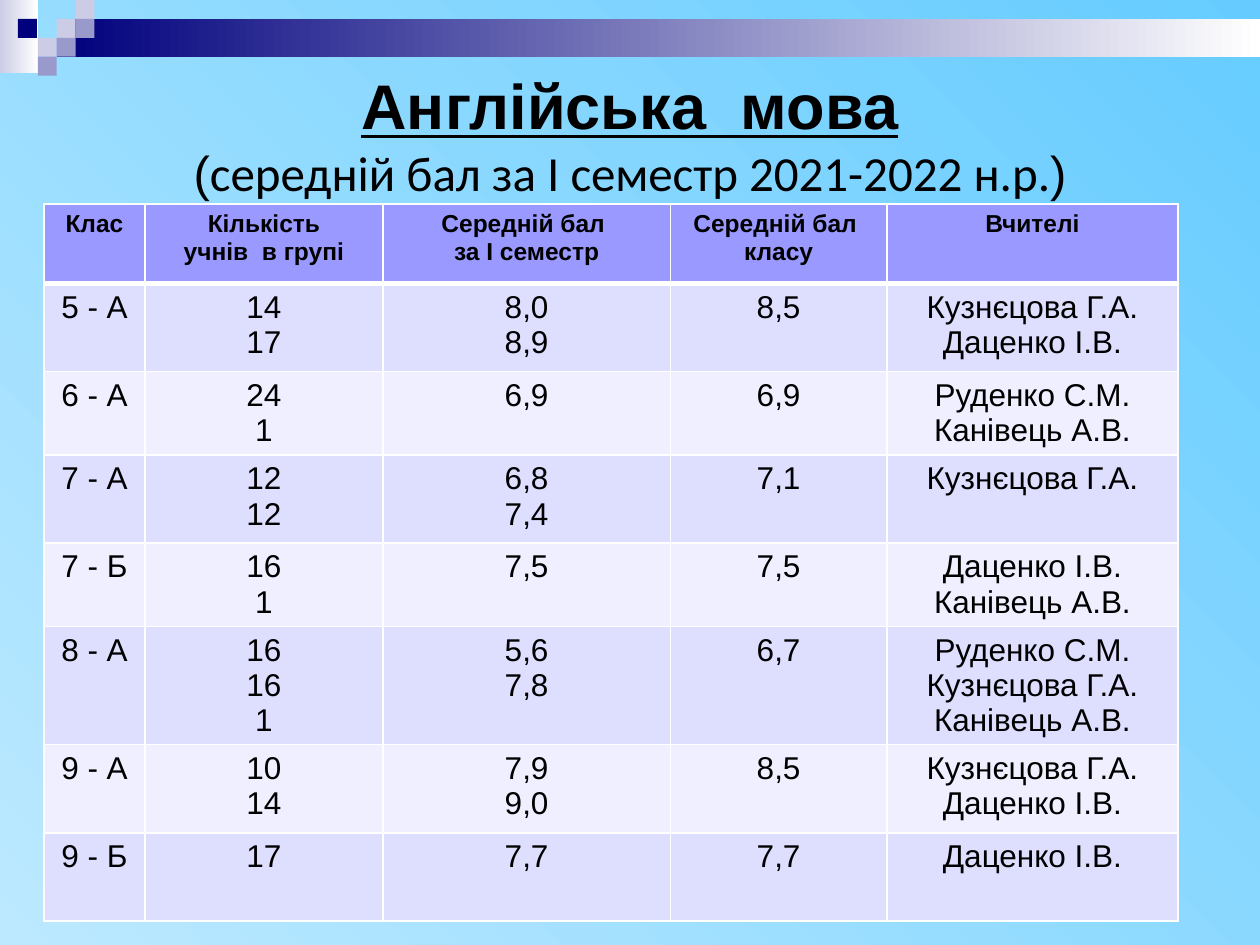
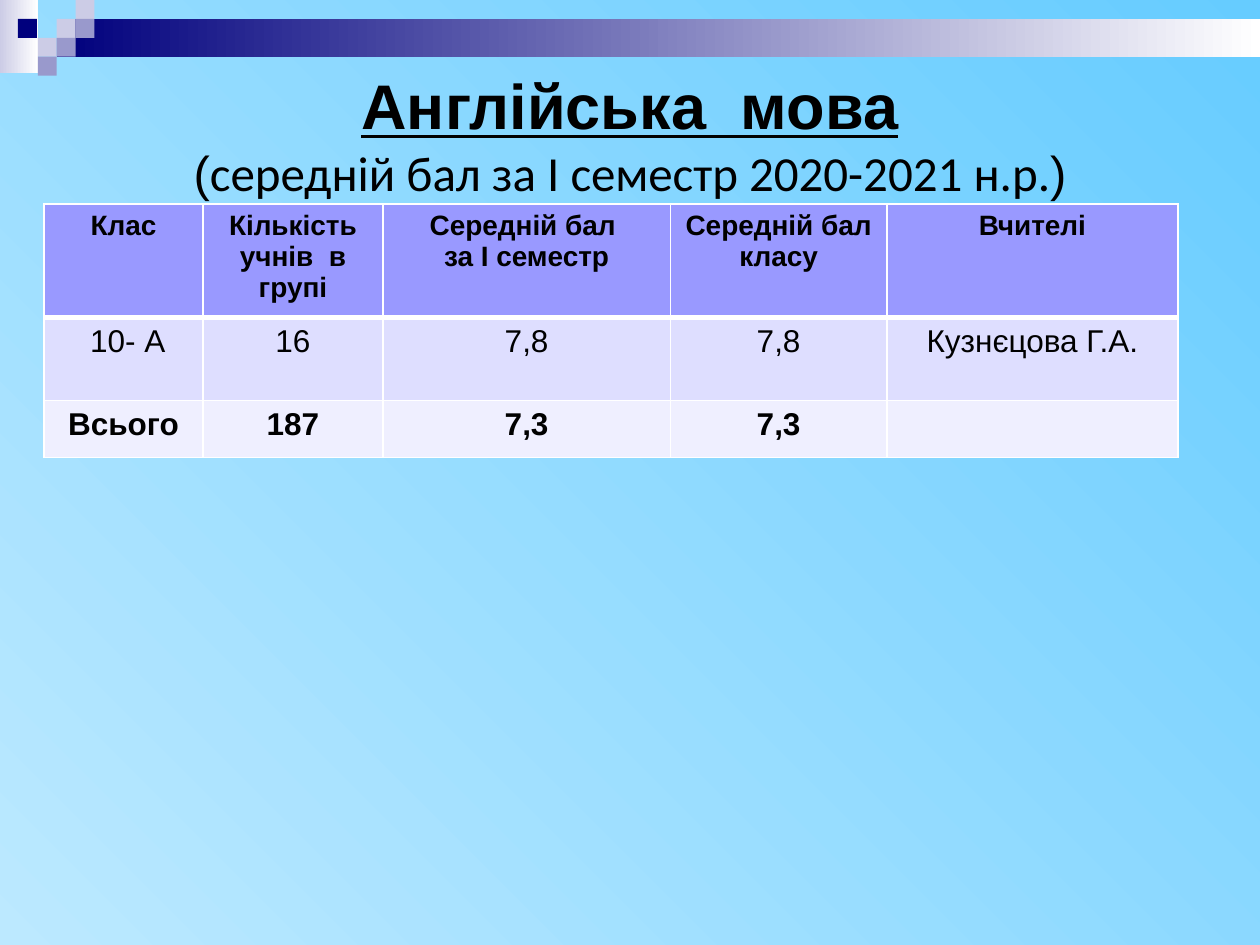
import dataclasses

import lxml.etree
import pptx
import pptx.dml.color
import pptx.enum.shapes
import pptx.enum.text
import pptx.oxml.ns
import pptx.util


@dataclasses.dataclass(frozen=True)
class Theme:
    sky: tuple = ("BCE9FF", "66CCFF")
    corner: tuple = ("CCCCE6", "FFFFFF")
    band: tuple = ("00007D", "FFFFFF")
    navy: str = "00007D"
    pale: str = "CCCCE6"
    violet: str = "9999CC"
    header: str = "9999FF"
    rows: tuple = ("DEDEFF", "EFEFFF")
    border: str = "FFFFFF"
    ink: str = "000000"
    subject_size: int = 36
    period_size: int = 28
    grade_size: int = 18
    font: str = "Arial"
    period_font: str = "Calibri"
    thin: int = 1
    thick: int = 3


@dataclasses.dataclass(frozen=True)
class Box:
    """A region in inches; share() cuts a smaller region by shares of it."""
    left: float
    top: float
    width: float
    height: float

    def share(self, left, top, width, height):
        return Box(self.left + left * self.width, self.top + top * self.height,
                   width * self.width, height * self.height)

    def emu(self):
        return [pptx.util.Inches(n) for n in dataclasses.astuple(self)]


THEME = Theme()
PAGE = Box(0, 0, 10, 7.5)
TILE = 0.15  # side of one square of the corner mosaic

HEADINGS = ("Клас", "Кількість\nучнів  в групі", "Середній бал \nза І семестр",
            "Середній бал \nкласу", "Вчителі")
SHARED_COLUMNS = (2.28, 1.72, 2.31)

MIDDLE_GRADES = (
    ("5 - А", "14\n17", "8,0\n8,9", "8,5", "Кузнєцова Г.А.\nДаценко І.В."),
    ("6 - А", "24\n1", "6,9", "6,9", "Руденко С.М.\nКанівець А.В."),
    ("7 - А", "12\n12", "6,8\n7,4", "7,1", "Кузнєцова Г.А."),
    ("7 - Б", "16\n1", "7,5", "7,5", "Даценко І.В.\nКанівець А.В."),
    ("8 - А", "16\n16\n1", "5,6\n7,8", "6,7",
     "Руденко С.М.\nКузнєцова Г.А.\nКанівець А.В."),
    ("9 - А", "10\n14", "7,9\n9,0", "8,5", "Кузнєцова Г.А.\nДаценко І.В."),
    ("9 - Б", "17", "7,7", "7,7", "Даценко І.В."),
)
SENIOR_GRADES = (
    (" 10- А", "16", "7,8", "7,8", "Кузнєцова Г.А."),
    ("Всього", "187", "7,3", "7,3", ""),
)


def rgb(value):
    return pptx.dml.color.RGBColor.from_string(value)


def apply_format(target, values):
    for name, value in values.items():
        setattr(target, name, value)


def style_font(font, size, **values):
    apply_format(font, {"size": pptx.util.Pt(size), "name": THEME.font, **values})
    font.color.rgb = rgb(THEME.ink)


def paint(fill, colours, angle=0):
    """Solid fill for one colour, linear gradient for a pair."""
    if isinstance(colours, str):
        fill.solid()
        fill.fore_color.rgb = rgb(colours)
        return
    fill.gradient()
    fill.gradient_angle = angle
    for stop, colour, position in zip(fill.gradient_stops, colours, (0, 1)):
        stop.color.rgb = rgb(colour)
        stop.position = position


def add_block(slide, box, colours):
    block = slide.shapes.add_shape(pptx.enum.shapes.MSO_SHAPE.RECTANGLE, *box.emu())
    block.shadow.inherit = False
    block.line.fill.background()
    paint(block.fill, colours)


# Top band with the corner mosaic
def add_header_band(slide, box):
    add_block(slide, box.share(0, 0, 0.03, 0.97), THEME.corner)
    add_block(slide, box.share(0.045, 0.25, 0.955, 0.5), THEME.band)
    mosaic = ((3, 1, THEME.pale), (4, 0, THEME.pale), (4, 1, THEME.violet),
              (2, 2, THEME.pale), (0.95, 1, THEME.navy), (3, 2, THEME.violet),
              (2, 3, THEME.violet))
    for column, row, colour in mosaic:
        add_block(slide, Box(box.left + column * TILE, box.top + row * TILE,
                             TILE, TILE), colour)


# Subject and school period
def add_title(slide, box, years):
    title = slide.shapes.title
    apply_format(title, dict(zip(("left", "top", "width", "height"), box.emu())))
    frame = title.text_frame
    apply_format(frame, {"word_wrap": True,
                         "auto_size": pptx.enum.text.MSO_AUTO_SIZE.NONE,
                         "vertical_anchor": pptx.enum.text.MSO_ANCHOR.MIDDLE})
    line = frame.paragraphs[0]
    line.alignment = pptx.enum.text.PP_ALIGN.CENTER
    subject = line.add_run()
    subject.text = "Англійська  мова"
    style_font(subject.font, THEME.subject_size, bold=True, underline=True)
    line.add_line_break()
    period = f"середній бал за І семестр {years} н.р."
    for text, font in (("(", THEME.font), (period, THEME.period_font), (")", THEME.font)):
        run = line.add_run()
        run.text = text
        style_font(run.font, THEME.period_size, name=font, bold=False, underline=False)


def add_borders(cell, top, bottom):
    properties = cell._tc.get_or_add_tcPr()
    tag = pptx.oxml.ns.qn
    widths = {"a:lnL": THEME.thin, "a:lnR": THEME.thin, "a:lnT": top, "a:lnB": bottom}
    for side, width in widths.items():
        edge = lxml.etree.SubElement(properties, tag(side), w=str(pptx.util.Pt(width)))
        solid = lxml.etree.SubElement(edge, tag("a:solidFill"))
        lxml.etree.SubElement(solid, tag("a:srgbClr"), val=THEME.border)


def fill_cell(cell, text, size, bold, colour):
    paint(cell.fill, colour)
    cell.text_frame.text = text
    for line in cell.text_frame.paragraphs:
        line.alignment = pptx.enum.text.PP_ALIGN.CENTER
        for run in line.runs:
            style_font(run.font, size, bold=bold)


# Table of average grades
def add_grades(slide, box, grades, columns, heights, heading_size):
    records = (HEADINGS, *grades)
    frame = slide.shapes.add_table(len(records), len(HEADINGS), *box.emu())
    table = frame.table
    for column, width in zip(table.columns, columns):
        column.width = pptx.util.Inches(box.width * width / sum(columns))
    for row, height in zip(table.rows, heights):
        row.height = pptx.util.Inches(box.height * height / sum(heights))
    for index, record in enumerate(records):
        heading = index == 0
        size = heading_size if heading else THEME.grade_size
        bold = heading or record[0] == "Всього"
        colour = THEME.header if heading else THEME.rows[(index - 1) % 2]
        top = THEME.thick if index == 1 else THEME.thin
        bottom = THEME.thick if heading else THEME.thin
        for cell, text in zip(table.rows[index].cells, record):
            add_borders(cell, top, bottom)
            fill_cell(cell, text, size, bold, colour)


def add_grade_slide(deck, years, grades, first_columns, heights, heading_size):
    slide = deck.slides.add_slide(deck.slide_layouts[5])
    paint(slide.background.fill, THEME.sky, angle=45)
    add_header_band(slide, PAGE.share(0, 0, 1, 0.08))
    add_title(slide, PAGE.share(0.05, 0.067, 0.9, 0.15), years)
    table_box = PAGE.share(0.035, 0.216, 0.9, sum(heights) / PAGE.height)
    add_grades(slide, table_box, grades, first_columns + SHARED_COLUMNS,
               heights, heading_size)


def main():
    deck = pptx.Presentation()
    deck.slide_width, deck.slide_height = PAGE.emu()[2:]
    add_grade_slide(deck, "2021-2022", MIDDLE_GRADES, (0.8, 1.89),
                    (0.63, 0.7, 0.66, 0.7, 0.66, 0.94, 0.7, 0.7), 14)
    add_grade_slide(deck, "2020-2021", SENIOR_GRADES, (1.26, 1.43),
                    (0.9, 0.66, 0.45), 16)
    deck.save("out.pptx")


if __name__ == "__main__":
    main()
